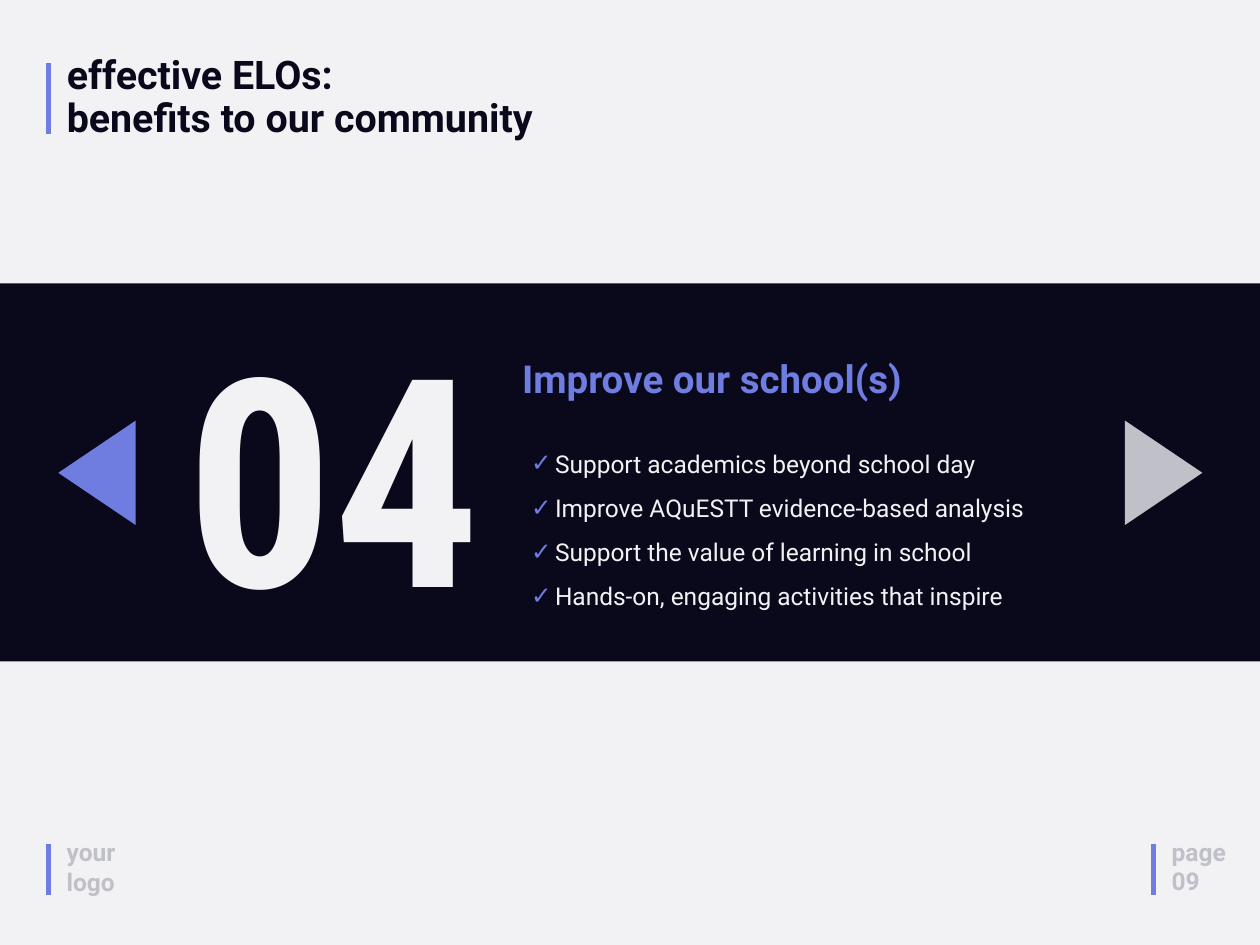
"""Build the 'Improve our school(s)' slide of the ELO community benefits deck."""
from dataclasses import dataclass

from lxml import etree
from pptx import Presentation
from pptx import util as u
from pptx.dml import color
from pptx.enum import shapes, text
from pptx.oxml import ns

INDIGO, NIGHT, PALE, GREY = "6F7DE1", "0A091B", "F2F2F5", "C0C0C8"
WIDTH, HEIGHT = 1440, 1080
MARGIN_X, RIGHT_X = 55.44, 1318.32
FOOTER_TOP, FOOTER_BOTTOM = 964.8, 1023.12


@dataclass(frozen=True)
class Box:
    left: float
    top: float
    width: float
    height: float


@dataclass(frozen=True)
class Rule:
    x: float
    top: float
    bottom: float


@dataclass(frozen=True)
class Block:
    box: Box
    lines: tuple[str, ...]
    size: float
    hue: str
    font: str = "Roboto"
    bold: bool = True
    spacing: float = 1.0


@dataclass(frozen=True)
class Panel:
    box: Box
    hue: str
    kind: shapes.MSO_SHAPE = shapes.MSO_SHAPE.RECTANGLE
    rotation: float = 0


RULES = (
    Rule(MARGIN_X, 72, 153.36),
    Rule(MARGIN_X, FOOTER_TOP, FOOTER_BOTTOM),
    Rule(RIGHT_X, FOOTER_TOP, FOOTER_BOTTOM),
)
BAND = Panel(Box(0, 324, WIDTH, 432), NIGHT)
ARROWS = (
    Panel(Box(1270.08, 496.08, 119.52, 88.56), GREY, shapes.MSO_SHAPE.ISOSCELES_TRIANGLE, 90),
    Panel(Box(51.12, 496.08, 119.52, 88.56), INDIGO, shapes.MSO_SHAPE.ISOSCELES_TRIANGLE, 270),
)
TITLE = Block(Box(69.12, 59.76, 689.04, 105.12),
              ("effective ELOs:", "benefits to our community"), 45, NIGHT, spacing=0.9)
BENEFITS = Block(Box(599.76, 492.48, 606.24, 210.96), (
    "Support academics beyond school day",
    "Improve AQuESTT evidence-based analysis",
    "Support the value of learning in school",
    "Hands-on, engaging activities that inspire",
), 28, PALE, bold=False, spacing=1.5)
LABELS = (
    Block(Box(69.12, 953.28, 85.68, 74.88), ("your logo",), 28, GREY),
    Block(Box(1332, 952.56, 100.8, 74.88), ("page", "09"), 28, GREY),
    Block(Box(205.92, 334.8, 429.12, 411.12), ("04",), 333, PALE, "Roboto Condensed"),
    Block(Box(589.68, 402.48, 490.32, 60.48), ("Improve our school(s)",), 44, INDIGO),
)


def rgb(value: str) -> color.RGBColor:
    """Turn a hex string into a colour."""
    return color.RGBColor.from_string(value)


def apply(target, values: dict) -> None:
    """Set every named attribute on the target."""
    for name, value in values.items():
        setattr(target, name, value)


def frame(box: Box) -> tuple[u.Pt, ...]:
    """Give left, top, width and height as lengths."""
    return tuple(u.Pt(side) for side in (box.left, box.top, box.width, box.height))


def style(paragraph, block: Block) -> None:
    """Format one paragraph and its runs."""
    apply(paragraph, {"alignment": text.PP_ALIGN.LEFT, "line_spacing": block.spacing,
                      "space_before": u.Pt(0), "space_after": u.Pt(0)})
    for run in paragraph.runs:
        apply(run.font, {"name": block.font, "size": u.Pt(block.size), "bold": block.bold})
        run.font.color.rgb = rgb(block.hue)


def write(holder, block: Block, soft_breaks: bool = False) -> None:
    """Place a text holder and fill it with the block's lines."""
    apply(holder, dict(zip(("left", "top", "width", "height"), frame(block.box))))
    body = holder.text_frame
    apply(body, {"word_wrap": True, "auto_size": text.MSO_AUTO_SIZE.NONE,
                 "vertical_anchor": text.MSO_ANCHOR.TOP})
    for index, line in enumerate(block.lines):
        if index and soft_breaks:
            body.paragraphs[0].add_line_break()
        elif index:
            body.add_paragraph()
        body.paragraphs[-1].add_run().text = line
    for paragraph in body.paragraphs:
        style(paragraph, block)


def add_ticks(holder, hue: str) -> None:
    """Give every paragraph a coloured tick bullet with a hanging indent."""
    for paragraph in holder.text_frame.paragraphs:
        properties = paragraph._p.get_or_add_pPr()
        indent = u.Pt(27.36)
        properties.set("marL", str(indent))
        properties.set("indent", str(-indent))
        tint = etree.SubElement(properties, ns.qn("a:buClr"))
        etree.SubElement(tint, ns.qn("a:srgbClr"), val=hue)
        etree.SubElement(properties, ns.qn("a:buChar"), char="✓")


def add_panel(slide, panel: Panel):
    """Draw a flat filled shape."""
    shape = slide.shapes.add_shape(panel.kind, *frame(panel.box))
    shape.rotation = panel.rotation
    shape.shadow.inherit = False
    shape.fill.solid()
    shape.fill.fore_color.rgb = rgb(panel.hue)
    shape.line.fill.background()
    return shape


def add_rule(slide, rule: Rule) -> None:
    """Draw a vertical accent line."""
    ends = (u.Pt(length) for length in (rule.x, rule.top, rule.x, rule.bottom))
    accent = slide.shapes.add_connector(shapes.MSO_CONNECTOR.STRAIGHT, *ends)
    accent.line.width = u.Pt(5)
    accent.line.color.rgb = rgb(INDIGO)
    etree.SubElement(accent.element.spPr, ns.qn("a:effectLst"))


def main() -> None:
    """Build and save the slide."""
    deck = Presentation()
    apply(deck, {"slide_width": u.Pt(WIDTH), "slide_height": u.Pt(HEIGHT)})
    slide = deck.slides.add_slide(deck.slide_layouts[1])
    slide.background.fill.solid()
    slide.background.fill.fore_color.rgb = rgb(PALE)
    title, benefits = slide.placeholders

    title.element.addprevious(add_panel(slide, BAND).element)
    for rule in RULES:
        add_rule(slide, rule)
    for arrow in ARROWS:
        add_panel(slide, arrow)
    write(title, TITLE, soft_breaks=True)
    for label in LABELS:
        write(slide.shapes.add_textbox(*frame(label.box)), label)
    write(benefits, BENEFITS)
    add_ticks(benefits, INDIGO)
    deck.save("out.pptx")


if __name__ == "__main__":
    main()
